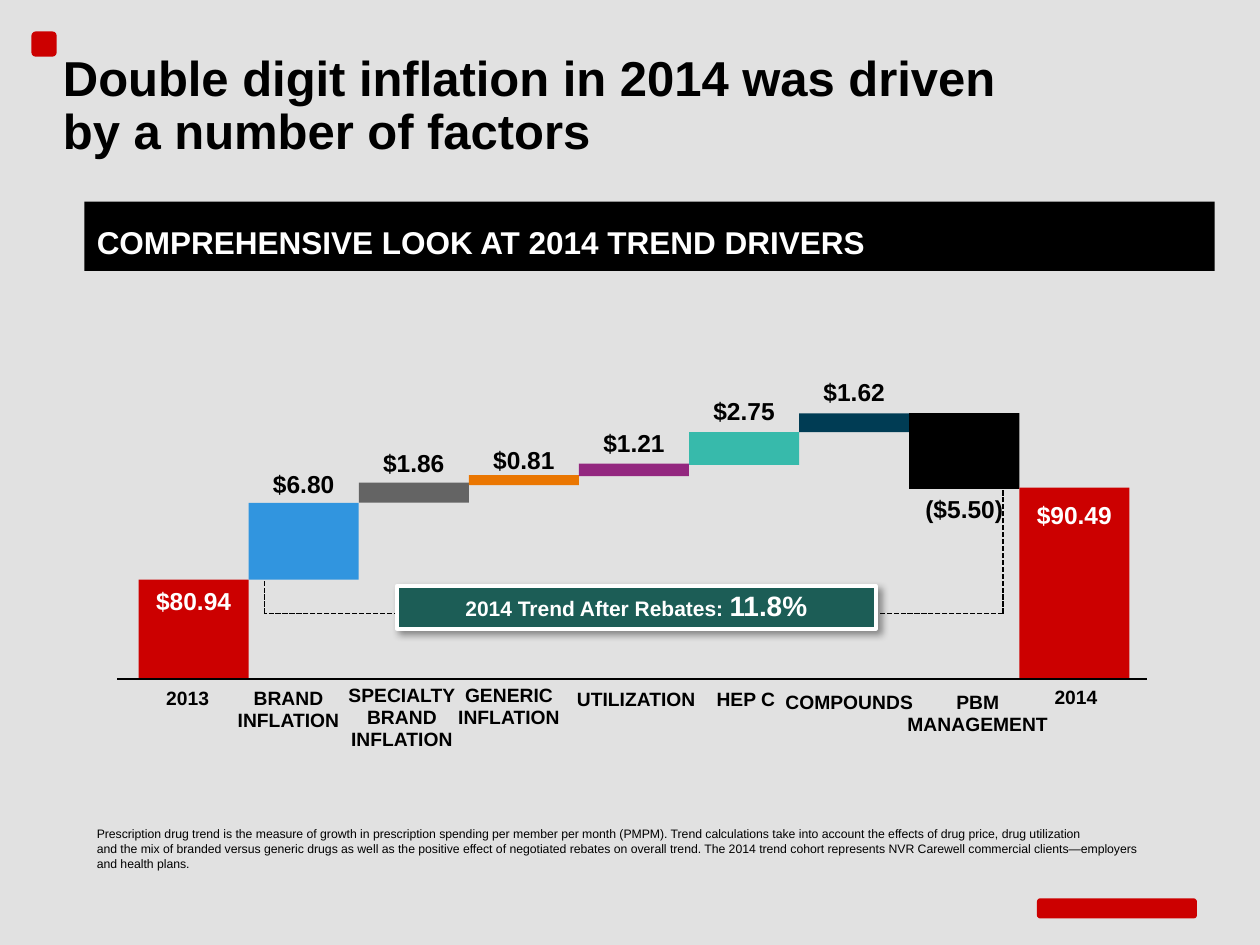
from lxml.etree import SubElement
from pptx import Presentation
from pptx.dml.color import RGBColor
from pptx.enum.dml import MSO_LINE
from pptx.enum.shapes import MSO_CONNECTOR, MSO_SHAPE
from pptx.enum.text import MSO_ANCHOR, PP_ALIGN
from pptx.oxml.ns import qn
from pptx.util import Inches, Pt

BLACK, WHITE, RED = "000000", "FFFFFF", "CC0000"


def color(hex_code):
    return RGBColor.from_string(hex_code)


class SlideBuilder:
    font = "Arial"

    def __init__(self, slide, background):
        self.slide = slide
        slide.background.fill.solid()
        slide.background.fill.fore_color.rgb = color(background)

    def set_text(self, shape, text, size, ink=BLACK, bold=True, align=PP_ALIGN.LEFT,
                 spacing=None, insets=(0, 0, 0, 0), anchor=MSO_ANCHOR.TOP):
        frame = shape.text_frame
        frame.word_wrap = True
        frame.vertical_anchor = anchor
        (frame.margin_left, frame.margin_top,
         frame.margin_right, frame.margin_bottom) = map(Inches, insets)
        paragraph = frame.paragraphs[0]
        paragraph.text = text
        paragraph.alignment = align
        paragraph.line_spacing = spacing
        for run in paragraph.runs:
            self.style_run(run, size, ink, bold)
        return paragraph

    def style_run(self, run, size, ink, bold=True):
        run.font.name = self.font
        run.font.size = Pt(size)
        run.font.bold = bold
        run.font.color.rgb = color(ink)

    def text(self, left, top, width, height, text, size, **style):
        box = self.slide.shapes.add_textbox(*map(Inches, (left, top, width, height)))
        return self.set_text(box, text, size, **style)

    def centered(self, center, top, text, size, **style):
        width = 1.3
        self.text(center - width / 2, top, width, 0.24, text, size,
                  align=PP_ALIGN.CENTER, **style)

    def block(self, left, top, width, height, fill, kind=MSO_SHAPE.RECTANGLE):
        shape = self.slide.shapes.add_shape(kind, *map(Inches, (left, top, width, height)))
        shape.shadow.inherit = False
        shape.fill.solid()
        shape.fill.fore_color.rgb = color(fill)
        shape.line.fill.background()
        return shape

    def line(self, x1, y1, x2, y2, dash=None):
        connector = self.slide.shapes.add_connector(
            MSO_CONNECTOR.STRAIGHT, *map(Inches, (x1, y1, x2, y2)))
        connector.line.color.rgb = color(BLACK)
        connector.line.width = Pt(1)
        if dash:
            connector.line.dash_style = dash
        SubElement(connector._element.spPr, qn("a:effectLst"))

    def callout(self, left, top, width, height, fill, label, figure):
        shape = self.block(left, top, width, height, fill)
        shape.line.color.rgb = color(WHITE)
        shape.line.width = Pt(2.25)
        effects = shape._element.spPr.find(qn("a:effectLst"))
        shadow = SubElement(effects, qn("a:outerShdw"), blurRad=str(Pt(4)),
                            dist=str(Pt(3)), dir=str(45 * 60000), algn="tl",
                            rotWithShape="0")
        tone = SubElement(shadow, qn("a:srgbClr"), val=BLACK)
        SubElement(tone, qn("a:alpha"), val="40000")
        paragraph = self.set_text(shape, label, 12, ink=WHITE, align=PP_ALIGN.CENTER,
                                  spacing=0.9, insets=(0.05,) * 4,
                                  anchor=MSO_ANCHOR.MIDDLE)
        figure_run = paragraph.add_run()
        figure_run.text = figure
        self.style_run(figure_run, 16, WHITE)


# Bar top, bar height, fill, value, value top, value ink, category, its center and top
DRIVERS = [
    (4.6, 0.79, RED, "$80.94", 4.65, WHITE, "2013", 1.49, 5.46),
    (3.99, 0.61, "3195DF", "$6.80", 3.72, BLACK, "BRAND\nINFLATION", 2.29, 5.46),
    (3.83, 0.16, "646464", "$1.86", 3.56, BLACK, "SPECIALTY\nBRAND\nINFLATION", 3.19, 5.44),
    (3.77, 0.08, "EA7601", "$0.81", 3.53, BLACK, "GENERIC\nINFLATION", 4.04, 5.44),
    (3.68, 0.1, "93277F", "$1.21", 3.4, BLACK, "UTILIZATION", 5.05, 5.47),
    (3.43, 0.26, "37BAAB", "$2.75", 3.14, BLACK, "HEP C", 5.92, 5.47),
    (3.28, 0.15, "003C54", "$1.62", 2.99, BLACK, "COMPOUNDS", 6.74, 5.49),
    (3.28, 0.6, BLACK, "($5.50)", 3.92, BLACK, "PBM\nMANAGEMENT", 7.76, 5.49),
    (3.87, 1.52, RED, "$90.49", 3.97, WHITE, "2014", 8.54, 5.45),
]
FIRST_LEFT, LAST_LEFT = 1.1, 8.09
BAR_WIDTH = (LAST_LEFT - FIRST_LEFT) / (len(DRIVERS) - 1)


def main():
    deck = Presentation()
    deck.slide_width, deck.slide_height = Inches(10), Inches(7.5)
    page = SlideBuilder(deck.slides.add_slide(deck.slide_layouts[6]), "E1E1E1")

    # Corner accent and footer brand mark
    page.block(0.25, 0.25, 0.2, 0.2, RED, MSO_SHAPE.ROUNDED_RECTANGLE)
    page.block(8.23, 7.13, 1.27, 0.16, RED, MSO_SHAPE.ROUNDED_RECTANGLE)

    # Title and banner
    page.text(0.5, 0.43, 9, 0.9,
              "Double digit inflation in 2014 was driven\nby a number of factors",
              28, spacing=Pt(30))
    banner = page.block(0.67, 1.6, 8.97, 0.55, BLACK)
    page.set_text(banner, "COMPREHENSIVE LOOK AT 2014 TREND DRIVERS", 18, ink=WHITE,
                  spacing=1.3, insets=(0.1, 0.05, 0.1, 0.05), anchor=MSO_ANCHOR.MIDDLE)

    # Bracket from the first driver to the last, with the overall trend
    for ends in ((2.1, 4.87, 2.1, 4.46), (7.96, 4.87, 2.1, 4.87), (7.96, 4.87, 7.96, 3.88)):
        page.line(*ends, dash=MSO_LINE.SQUARE_DOT)
    page.callout(3.15, 4.65, 3.8, 0.34, "1C5D56", "2014 Trend After Rebates: ", "11.8%")

    # Waterfall bars with values and categories
    for index, (top, height, fill, value, value_top, ink,
                category, category_center, category_top) in enumerate(DRIVERS):
        left = FIRST_LEFT + index * BAR_WIDTH
        page.block(left, top, BAR_WIDTH, height, fill)
        page.centered(left + BAR_WIDTH / 2, value_top, value, 14, ink=ink)
        page.centered(category_center, category_top, category, 11, spacing=0.95)
    page.line(9.1, 5.39, 0.93, 5.39)

    # Footnote
    page.text(0.67, 6.51, 9, 0.38,
              "Prescription drug trend is the measure of growth in prescription spending per "
              "member per month (PMPM). Trend calculations take into account the effects of "
              "drug price, drug utilization\nand the mix of branded versus generic drugs as "
              "well as the positive effect of negotiated rebates on overall trend. The 2014 "
              "trend cohort represents NVR Carewell commercial clients—employers\n"
              "and health plans.",
              7, bold=False, insets=(0.1, 0.05, 0.1, 0.05))

    deck.save("out.pptx")


if __name__ == "__main__":
    main()
